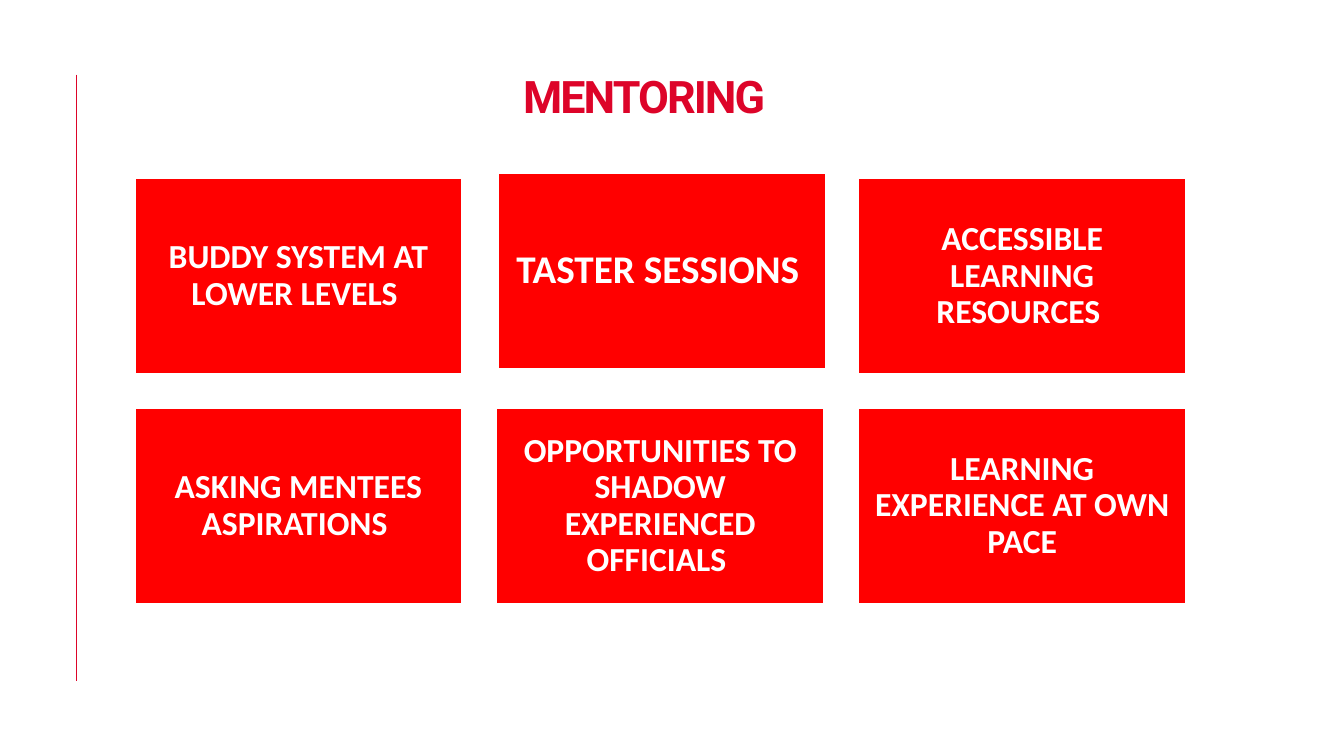
from pptx import Presentation
from pptx.dml.color import RGBColor
from pptx.enum.shapes import MSO_CONNECTOR, MSO_SHAPE
from pptx.enum.text import MSO_ANCHOR, PP_ALIGN
from pptx.util import Pt
from lxml.etree import SubElement
from pptx.oxml.ns import qn

CRIMSON = RGBColor(0xDD, 0x04, 0x29)
RED = RGBColor(0xFF, 0x00, 0x00)
WHITE = RGBColor(0xFF, 0xFF, 0xFF)

CARD_WIDTH, CARD_HEIGHT = 234.7, 141.1
COLUMN_STEP, ROW_STEP = 258.5, 164.2
CARDS = [
    ["BUDDY SYSTEM AT LOWER LEVELS ", "TASTER SESSIONS ", "ACCESSIBLE LEARNING RESOURCES "],
    [
        "ASKING MENTEES ASPIRATIONS ",
        "OPPORTUNITIES TO SHADOW EXPERIENCED OFFICIALS ",
        "LEARNING EXPERIENCE AT OWN PACE",
    ],
]
FEATURED = (0, 1)
FEATURED_SHIFT = (1.4, -3.6)


def set_insets(frame, left, top, right, bottom):
    frame.margin_left, frame.margin_top = Pt(left), Pt(top)
    frame.margin_right, frame.margin_bottom = Pt(right), Pt(bottom)


def style_font(font, name, size, color):
    font.name = name
    font.size = Pt(size)
    font.bold = True
    font.color.rgb = color


def add_side_rule(slide, left, top, height):
    rule = slide.shapes.add_connector(
        MSO_CONNECTOR.STRAIGHT, Pt(left), Pt(top), Pt(left), Pt(top + height)
    )
    rule.line.color.rgb = CRIMSON
    rule.line.width = Pt(0.5)
    SubElement(rule._element.spPr, qn("a:effectLst"))


def add_title(slide, left, top, width, height):
    box = slide.shapes.add_textbox(Pt(left), Pt(top), Pt(width), Pt(height))
    frame = box.text_frame
    frame.word_wrap = True
    set_insets(frame, 0, 0.9, 0, 0)
    para = frame.paragraphs[0]
    span = para.add_run()
    span.text = "MENTORING"
    style_font(span.font, "Roboto", 32, CRIMSON)
    span.font._element.set("spc", "-140")


def add_card(slide, left, top, text, size, inset):
    card = slide.shapes.add_shape(
        MSO_SHAPE.RECTANGLE, Pt(left), Pt(top), Pt(CARD_WIDTH), Pt(CARD_HEIGHT)
    )
    card.shadow.inherit = False
    card.fill.solid()
    card.fill.fore_color.rgb = RED
    card.line.color.rgb = WHITE
    card.line.width = Pt(2)
    frame = card.text_frame
    frame.word_wrap = True
    frame.vertical_anchor = MSO_ANCHOR.MIDDLE
    set_insets(frame, inset, inset, inset, inset)
    para = frame.paragraphs[0]
    para.text = text
    para.alignment = PP_ALIGN.CENTER
    para.line_spacing = 0.9
    para.space_after = Pt(0.35 * size)
    style_font(para.font, "Calibri", size, WHITE)


def add_card_grid(slide, left, top):
    for row, texts in enumerate(CARDS):
        for column, text in enumerate(texts):
            featured = (row, column) == FEATURED
            shift_x, shift_y = FEATURED_SHIFT if featured else (0, 0)
            add_card(
                slide,
                left + column * COLUMN_STEP + shift_x,
                top + row * ROW_STEP + shift_y,
                text,
                size=28 if featured else 24,
                inset=8.4 if featured else 7.2,
            )


def main():
    deck = Presentation()
    deck.slide_width, deck.slide_height = Pt(960), Pt(540)
    page = deck.slides.add_slide(deck.slide_layouts[6])
    add_side_rule(page, 54.7, 53.3, 433.4)
    add_title(page, 373.7, 48.2, 196.6, 40.3)
    add_card_grid(page, 95.8, 126.7)
    deck.save("out.pptx")


if __name__ == "__main__":
    main()
